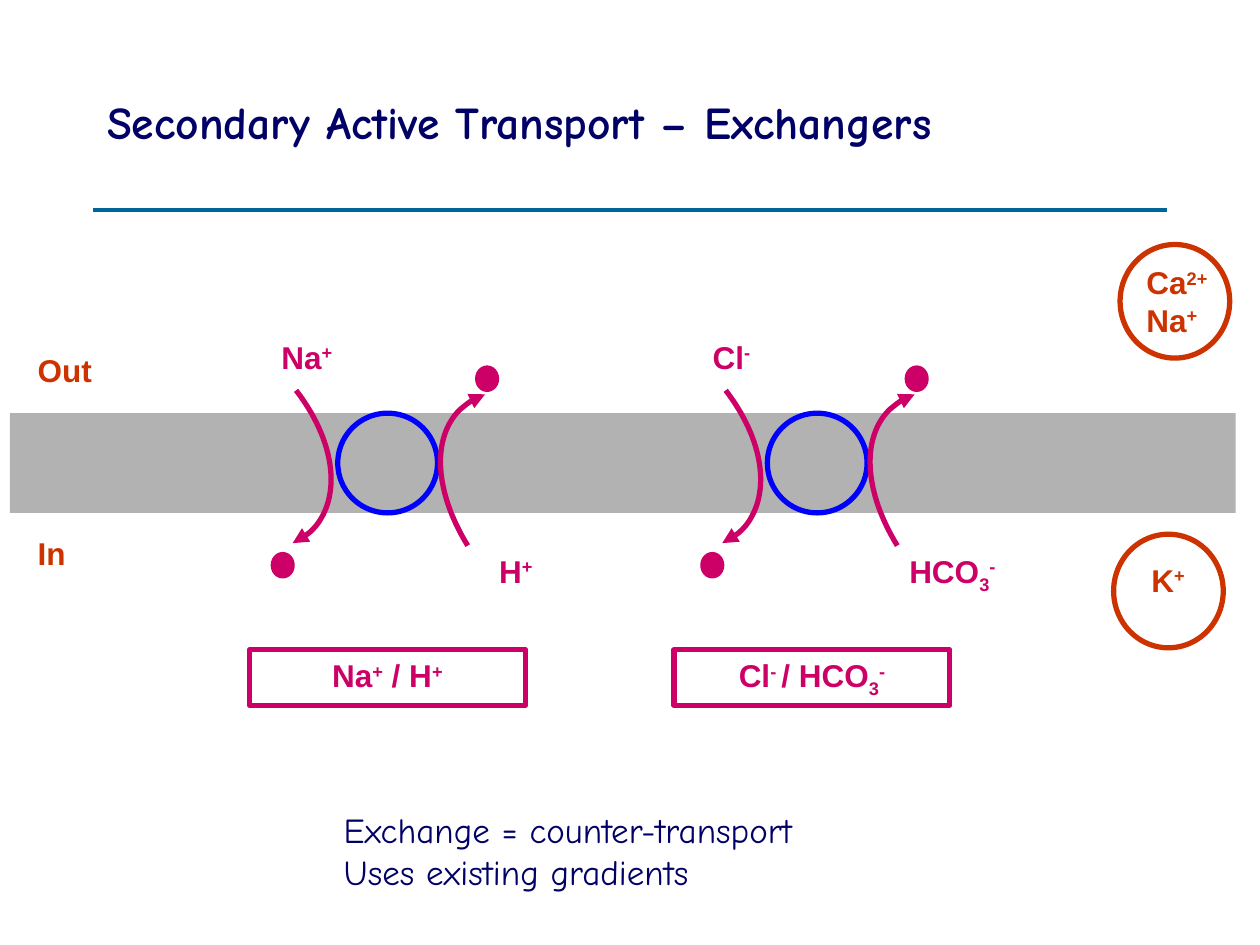
from dataclasses import dataclass
from typing import NamedTuple

from lxml import etree
from pptx import Presentation
from pptx.dml.color import RGBColor
from pptx.enum.shapes import MSO_CONNECTOR, MSO_SHAPE
from pptx.enum.text import MSO_ANCHOR, MSO_AUTO_SIZE, PP_ALIGN
from pptx.oxml.ns import qn
from pptx.util import Cm, Pt

OVAL, RECTANGLE = MSO_SHAPE.OVAL, MSO_SHAPE.RECTANGLE
LEFT, CENTER = PP_ALIGN.LEFT, PP_ALIGN.CENTER
STRAIGHT = MSO_CONNECTOR.STRAIGHT
MIDDLE, TOP = MSO_ANCHOR.MIDDLE, MSO_ANCHOR.TOP
GROW = MSO_AUTO_SIZE.SHAPE_TO_FIT_TEXT
SUPER, SUB = 30000, -25000


class Style(NamedTuple):
    font: str
    size: int
    color: RGBColor
    bold: bool


@dataclass(frozen=True)
class Theme:
    rule: RGBColor = RGBColor(0x00, 0x66, 0x99)
    membrane: RGBColor = RGBColor(0xB2, 0xB2, 0xB2)
    carrier: RGBColor = RGBColor(0x00, 0x00, 0xFF)
    ion: RGBColor = RGBColor(0xCC, 0x00, 0x66)
    gradient: RGBColor = RGBColor(0xCC, 0x33, 0x00)
    navy: RGBColor = RGBColor(0x00, 0x00, 0x66)
    outline: float = 3
    rule_width: float = 2.25

    def title(self) -> Style:
        return Style("Comic Neue", 26, self.navy, True)

    def note(self) -> Style:
        return Style("Comic Neue", 20, self.navy, False)

    def label(self, color: RGBColor) -> Style:
        return Style("Arial", 18, color, True)


class Box(NamedTuple):
    """Left, top, width and height in centimetres."""
    left: float
    top: float
    width: float
    height: float

    def emu(self) -> list:
        return [Cm(value) for value in self]


class Part(NamedTuple):
    text: str
    baseline: int = 0


class Exchanger(NamedTuple):
    carrier_left: float
    label_left: float
    exit_width: float
    entering: tuple
    leaving: tuple
    name: tuple


THEME = Theme()
ION_STYLE = THEME.label(THEME.ion)
GRADIENT_STYLE = THEME.label(THEME.gradient)

SODIUM = (Part("Na"), Part("+", SUPER))
PROTON = (Part("H"), Part("+", SUPER))
CHLORIDE = (Part("Cl"), Part("-", SUPER))
BICARBONATE = (Part("HCO"), Part("3", SUB), Part("-", SUPER))
POTASSIUM = (Part("K"), Part("+", SUPER))
CALCIUM = (Part("Ca"), Part("2+", SUPER))

EXCHANGERS = (
    Exchanger(6.81, 5.03, 1.98, SODIUM, PROTON, (*SODIUM, Part(" / "), *PROTON)),
    Exchanger(15.47, 13.59, 2.46, CHLORIDE, BICARBONATE,
              (*CHLORIDE, Part(" ", SUPER), Part("/ "), *BICARBONATE)),
)

MEMBRANE = Box(0.2, 8.33, 24.71, 2.01)
# Bezier points: x from the carrier's left edge, y from the slide's top
INWARD = ((-0.84, 7.87), (-0.08, 8.86), (0.08, 9.93), (-0.43, 10.59),
          (-0.56, 10.74), (-0.71, 10.85), (-0.91, 10.95))
OUTWARD = ((2.62, 11.0), (1.96, 9.93), (1.88, 8.84), (2.46, 8.26),
           (2.62, 8.13), (2.77, 8.0), (2.97, 7.95))


def write(shape, lines: tuple, style: Style, align=LEFT, anchor=TOP) -> None:
    """Each line is a tuple of parts and becomes one paragraph."""
    frame = shape.text_frame
    frame.word_wrap = True
    frame.vertical_anchor = anchor
    if anchor == TOP:
        frame.auto_size = GROW
    for index, parts in enumerate(lines):
        paragraph = frame.add_paragraph() if index else frame.paragraphs[0]
        paragraph.alignment = align
        font = paragraph.font
        font.name, font.size, font.bold = style.font, Pt(style.size), style.bold
        font.color.rgb = style.color
        for part in parts:
            run = paragraph.add_run()
            run.text = part.text
            if part.baseline:
                run._r.get_or_add_rPr().set("baseline", str(part.baseline))


def add_text(slide, box: Box, lines: tuple, style: Style, align=LEFT, anchor=TOP) -> None:
    write(slide.shapes.add_textbox(*box.emu()), lines, style, align, anchor)


def paint(shape, fill: RGBColor | None, line: RGBColor | None) -> None:
    shape.shadow.inherit = False
    if fill is None:
        shape.fill.background()
    else:
        shape.fill.solid()
        shape.fill.fore_color.rgb = fill
    if line is None:
        shape.line.fill.background()
    else:
        shape.line.color.rgb = line
        shape.line.width = Pt(THEME.outline)


def add_form(slide, kind, box: Box, fill: RGBColor | None, line: RGBColor | None):
    shape = slide.shapes.add_shape(kind, *box.emu())
    paint(shape, fill, line)
    return shape


def add_curved_arrow(slide, points: tuple, left: float) -> None:
    start, *rest = [(Cm(left + x), Cm(y)) for x, y in points]
    builder = slide.shapes.build_freeform(*start)
    builder.add_line_segments(rest, close=False)
    arrow = builder.convert_to_shape()
    paint(arrow, None, THEME.ion)
    # Join every three straight segments into one Bezier segment
    segments = list(arrow._element.iter(qn("a:lnTo")))
    for first in range(0, len(segments), 3):
        group = segments[first:first + 3]
        curve = etree.Element(qn("a:cubicBezTo"))
        group[0].addprevious(curve)
        for segment in group:
            curve.append(segment[0])
            segment.getparent().remove(segment)
    outline = arrow._element.spPr.find(qn("a:ln"))
    etree.SubElement(outline, qn("a:tailEnd"), type="triangle")


def add_exchanger(slide, item: Exchanger) -> None:
    x, label_x = item.carrier_left, item.label_left
    add_form(slide, OVAL, Box(x, MEMBRANE.top, 2.01, 2.01), THEME.membrane, THEME.carrier)
    for points, dot_x, dot_y in ((INWARD, -1.3, 11.18), (OUTWARD, 2.82, 7.42)):
        add_curved_arrow(slide, points, x)
        add_form(slide, OVAL, Box(x + dot_x, dot_y, 0.38, 0.43), THEME.ion, THEME.ion)
    name_box = add_form(slide, RECTANGLE, Box(label_x, 13.1, 5.56, 1.12), None, THEME.ion)
    write(name_box, (item.name,), ION_STYLE, CENTER)
    add_text(slide, Box(label_x + 0.23, 6.68, 1.85, 1.02), (item.entering,), ION_STYLE, CENTER)
    add_text(slide, Box(label_x + 4.38, 11.0, item.exit_width, 1.02),
             (item.leaving,), ION_STYLE, CENTER)


def main() -> None:
    deck = Presentation()
    deck.slide_width, deck.slide_height = Cm(25.4), Cm(19.05)
    slide = deck.slides.add_slide(deck.slide_layouts[6])

    # Title and rule
    rule = slide.shapes.add_connector(STRAIGHT, Cm(1.88), Cm(4.24), Cm(23.52), Cm(4.24))
    rule.line.color.rgb = THEME.rule
    rule.line.width = Pt(THEME.rule_width)
    etree.SubElement(rule._element.spPr, qn("a:effectLst"))
    add_text(slide, Box(1.91, 0.64, 21.59, 3.61),
             ((Part("Secondary Active Transport – Exchangers"),),), THEME.title(), anchor=MIDDLE)

    # Membrane with its two sides
    add_form(slide, RECTANGLE, MEMBRANE, THEME.membrane, None)
    for side, top in (("Out", 6.96), ("In", 10.64)):
        add_text(slide, Box(0.51, top, 2.67, 1.02), ((Part(side),),), GRADIENT_STYLE)

    for exchanger in EXCHANGERS:
        add_exchanger(slide, exchanger)

    # Summary
    add_text(slide, Box(6.68, 16.18, 12.29, 1.96),
             ((Part("Exchange = counter-transport"),), (Part("Uses existing gradients"),)),
             THEME.note())

    # Ions concentrated outside and inside
    add_text(slide, Box(22.86, 5.18, 1.98, 1.78), (CALCIUM, SODIUM), GRADIENT_STYLE)
    add_text(slide, Box(22.56, 11.18, 1.98, 1.02), (POTASSIUM,), GRADIENT_STYLE, CENTER)
    for left, top in ((22.58, 4.93), (22.45, 10.77)):
        add_form(slide, OVAL, Box(left, top, 2.21, 2.29), None, THEME.gradient)

    deck.save("out.pptx")


if __name__ == "__main__":
    main()
